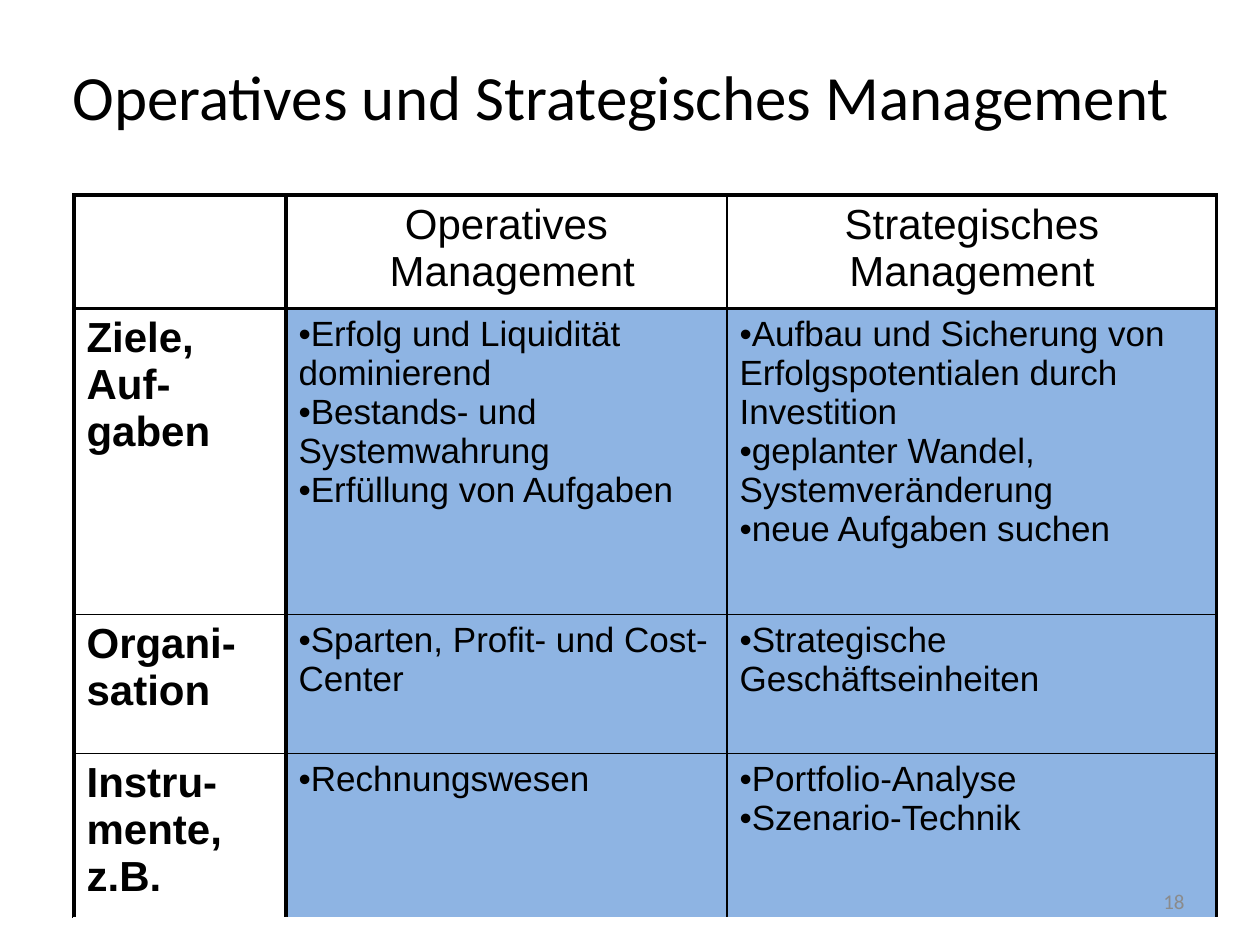
"""Build a slide with a table comparing operative and strategic management."""
import dataclasses

import lxml.etree
import pptx
import pptx.dml.color
import pptx.enum.text
import pptx.oxml.ns
import pptx.util

TITLE = "Operatives und Strategisches Management"
PAGE_NUMBER = "18"
HEADERS = [[], ["Operatives", " Management"], ["Strategisches", "Management"]]
TOPICS = [
    (
        "Ziele, Auf-gaben",
        ["Erfolg und Liquidität dominierend", "Bestands- und Systemwahrung", "Erfüllung von Aufgaben"],
        [
            "Aufbau und Sicherung von Erfolgspotentialen durch Investition",
            "geplanter Wandel, Systemveränderung",
            "neue Aufgaben suchen",
        ],
    ),
    ("Organi-sation", ["Sparten, Profit- und Cost-Center"], ["Strategische Geschäftseinheiten"]),
    ("Instru-mente, z.B.", ["Rechnungswesen"], ["Portfolio-Analyse", "Szenario-Technik"]),
]
EMPTY_ROW = [[], [], []]

SLIDE_SIZE = (1260, 945)
TITLE_BOX = (54, 0, 1134, 190)
NUMBER_BOX = (903, 876, 294, 50)
TABLE_ORIGIN = (74, 195)
COLUMN_WIDTHS = [212, 441, 490]
ROW_HEIGHTS = [113, 306, 139, 164, 113]
EMU_PER_PX = 914400 / 126


@dataclasses.dataclass(frozen=True)
class Theme:
    text: str = "000000"
    muted: str = "8B8B8B"
    plain_fill: str = "FFFFFF"
    topic_fill: str = "8EB4E3"
    title_font: str = "Calibri"
    table_font: str = "Arial"
    title_size: int = 36
    heading_size: int = 24
    body_size: int = 20
    number_size: int = 12
    thick: int = 2
    thin: int = 1


THEME = Theme()
ALIGN = pptx.enum.text.PP_ALIGN
ANCHOR = pptx.enum.text.MSO_ANCHOR


def px(value):
    return pptx.util.Emu(round(value * EMU_PER_PX))


def rgb(value):
    return pptx.dml.color.RGBColor.from_string(value)


def add_bullet(paragraph):
    properties = paragraph._p.get_or_add_pPr()
    properties.set("marL", "0")
    properties.set("indent", "0")
    lxml.etree.SubElement(properties, pptx.oxml.ns.qn("a:buFont"), typeface=THEME.table_font)
    lxml.etree.SubElement(properties, pptx.oxml.ns.qn("a:buChar"), char="•")


def write_text(frame, lines, *, size, font=THEME.table_font, color=THEME.text,
               bold=False, align=ALIGN.LEFT, bullets=False):
    for index, line in enumerate(lines):
        paragraph = frame.add_paragraph() if index else frame.paragraphs[0]
        paragraph.alignment = align
        if bullets:
            add_bullet(paragraph)
        run = paragraph.add_run()
        run.text = line
        run.font.name = font
        run.font.size = pptx.util.Pt(size)
        run.font.bold = bold
        run.font.color.rgb = rgb(color)


def add_text_box(slide, box, text, **text_format):
    frame = slide.shapes.add_textbox(*map(px, box)).text_frame
    frame.word_wrap = True
    frame.vertical_anchor = ANCHOR.MIDDLE
    write_text(frame, [text], **text_format)


def set_borders(cell, widths):
    properties = cell._tc.get_or_add_tcPr()
    for index, (side, width) in enumerate(widths.items()):
        line = lxml.etree.Element(pptx.oxml.ns.qn(f"a:ln{side}"), w=str(pptx.util.Pt(width)))
        fill = lxml.etree.SubElement(line, pptx.oxml.ns.qn("a:solidFill"))
        lxml.etree.SubElement(fill, pptx.oxml.ns.qn("a:srgbClr"), val=THEME.text)
        properties.insert(index, line)


def format_cell(cell, row, column):
    is_topic = row > 0 and column > 0
    cell.fill.solid()
    cell.fill.fore_color.rgb = rgb(THEME.topic_fill if is_topic else THEME.plain_fill)
    set_borders(cell, {
        "L": THEME.thin if column == 2 else THEME.thick,
        "R": THEME.thin if column == 1 else THEME.thick,
        "T": THEME.thick if row < 2 else THEME.thin,
        "B": THEME.thick if row == 0 else THEME.thin,
    })


def add_comparison_table(slide):
    topic_rows = [[[topic], operative, strategic] for topic, operative, strategic in TOPICS]
    rows = [HEADERS, *topic_rows, EMPTY_ROW]
    size = (sum(COLUMN_WIDTHS), sum(ROW_HEIGHTS))
    frame = slide.shapes.add_table(len(rows), len(HEADERS), *map(px, TABLE_ORIGIN + size))
    table = frame.table
    table.first_row = False
    table.horz_banding = False
    for column, width in zip(table.columns, COLUMN_WIDTHS):
        column.width = px(width)
    for row, height in zip(table.rows, ROW_HEIGHTS):
        row.height = px(height)
    for row, contents in enumerate(rows):
        for column, lines in enumerate(contents):
            cell = table.cell(row, column)
            if contents is EMPTY_ROW:
                cell.fill.background()
                continue
            format_cell(cell, row, column)
            is_topic = row > 0 and column > 0
            write_text(
                cell.text_frame, lines,
                size=THEME.body_size if is_topic else THEME.heading_size,
                bold=row > 0 and column == 0,
                align=ALIGN.LEFT if row else ALIGN.CENTER,
                bullets=is_topic,
            )


def main():
    presentation = pptx.Presentation()
    presentation.slide_width, presentation.slide_height = map(px, SLIDE_SIZE)
    slide = presentation.slides.add_slide(presentation.slide_layouts[6])
    add_text_box(slide, TITLE_BOX, TITLE, size=THEME.title_size,
                 font=THEME.title_font, align=ALIGN.CENTER)
    add_comparison_table(slide)
    add_text_box(slide, NUMBER_BOX, PAGE_NUMBER, size=THEME.number_size,
                 font=THEME.title_font, color=THEME.muted, align=ALIGN.RIGHT)
    presentation.save("out.pptx")


if __name__ == "__main__":
    main()
